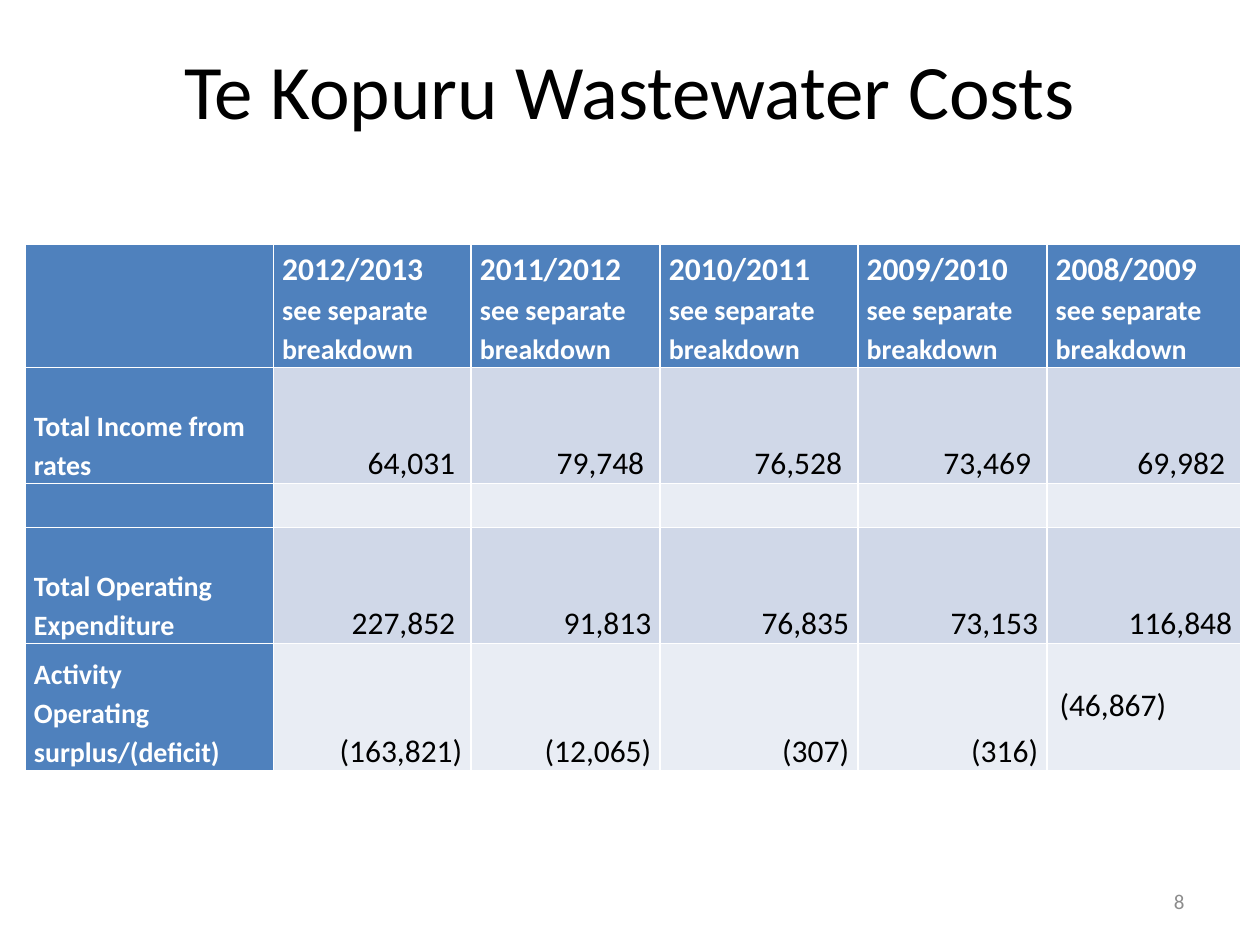
"""Build the Te Kopuru wastewater costs slide."""
from dataclasses import dataclass

from pptx import Presentation
from pptx.dml.color import RGBColor
from pptx.enum.text import MSO_ANCHOR, PP_ALIGN
from pptx.util import Inches, Pt

LEFT, CENTER, RIGHT = PP_ALIGN.LEFT, PP_ALIGN.CENTER, PP_ALIGN.RIGHT
TOP, MIDDLE, BOTTOM = MSO_ANCHOR.TOP, MSO_ANCHOR.MIDDLE, MSO_ANCHOR.BOTTOM
TITLE_ONLY = 5
FONT = "Calibri"
COLORS = {
    "text": "000000", "head": "4F81BD", "head_text": "FFFFFF",
    "band_dark": "D0D8E8", "band_light": "E9EDF4", "number": "8C8C8C",
}
COL_WIDTHS = (1.97, 1.57, 1.5, 1.57, 1.5, 1.54)
YEARS = ("2012/2013", "2011/2012", "2010/2011", "2009/2010", "2008/2009")


@dataclass
class CostRow:
    label: str
    values: tuple[str, ...]
    height: float
    band: str


ROWS = (
    CostRow("Total Income from rates",
            ("64,031 ", "79,748 ", "76,528 ", "73,469 ", "69,982 "), 0.92, "band_dark"),
    CostRow("", ("",) * len(YEARS), 0.35, "band_light"),
    CostRow("Total Operating Expenditure",
            ("227,852 ", "91,813", "76,835", "73,153", "116,848"), 0.92, "band_dark"),
    CostRow("Activity \vOperating surplus/(deficit)",
            ("(163,821)", "(12,065)", "(307)", "(316)", "(46,867)"), 1.01, "band_light"),
)
HEADER_HEIGHT = 0.96


def rgb(name: str) -> RGBColor:
    return RGBColor.from_string(COLORS[name])


def format_paragraph(p, size: float, color: str, align=LEFT, bold: bool = False) -> None:
    p.alignment = align
    font = p.font
    font.name, font.size, font.bold = FONT, Pt(size), bold
    font.color.rgb = rgb(color)


def place(sp, left: float, top: float, width: float, height: float) -> None:
    sp.left, sp.top = Inches(left), Inches(top)
    sp.width, sp.height = Inches(width), Inches(height)


def fill_cell(cell, lines: tuple[tuple[str, float], ...], fill: str,
              color: str, align=LEFT, bold: bool = False) -> None:
    cell.fill.solid()
    cell.fill.fore_color.rgb = rgb(fill)
    cell.vertical_anchor = BOTTOM
    cell.margin_left = cell.margin_right = Inches(0.07)
    cell.margin_top = cell.margin_bottom = 0
    tf = cell.text_frame
    for i, (text, size) in enumerate(lines):
        p = tf.add_paragraph() if i else tf.paragraphs[0]
        p.text = text
        p.line_spacing = 1.15
        format_paragraph(p, size, color, align, bold)


def add_cost_table(s) -> None:
    heights = (HEADER_HEIGHT, *(row.height for row in ROWS))
    table = s.shapes.add_table(
        len(heights), len(COL_WIDTHS), Inches(0.2), Inches(1.94),
        Inches(sum(COL_WIDTHS)), Inches(sum(heights))).table
    table.first_col = True
    for column, width in zip(table.columns, COL_WIDTHS):
        column.width = Inches(width)
    for row, height in zip(table.rows, heights):
        row.height = Inches(height)

    fill_cell(table.cell(0, 0), (("", 16),), "head", "head_text")
    for c, year in enumerate(YEARS, 1):
        lines = ((year, 18), ("see separate breakdown", 16))
        fill_cell(table.cell(0, c), lines, "head", "head_text", bold=True)
    for r, row in enumerate(ROWS, 1):
        fill_cell(table.cell(r, 0), ((row.label, 16),), "head", "head_text", bold=True)
        for c, value in enumerate(row.values, 1):
            fill_cell(table.cell(r, c), ((value, 18),), row.band, "text", RIGHT)

    raised = table.cell(len(ROWS), len(YEARS))
    raised.text_frame.paragraphs[0].alignment = LEFT
    raised.margin_left, raised.margin_bottom = Inches(0.1), Inches(0.36)


def add_title(s) -> None:
    sp = s.shapes.title
    place(sp, 0.5, 0.29, 9, 6.41)
    tf = sp.text_frame
    tf.text = "Te Kopuru Wastewater Costs"
    tf.vertical_anchor = TOP
    format_paragraph(tf.paragraphs[0], 44, "text", CENTER)


def add_slide_number(s) -> None:
    sp = s.shapes.add_textbox(Inches(7.17), Inches(6.95), Inches(2.33), Inches(0.4))
    tf = sp.text_frame
    tf.word_wrap = True
    tf.vertical_anchor = MIDDLE
    tf.text = "8"
    format_paragraph(tf.paragraphs[0], 12, "number", RIGHT)


def main() -> None:
    prs = Presentation()
    prs.slide_width, prs.slide_height = Inches(10), Inches(7.5)
    s = prs.slides.add_slide(prs.slide_layouts[TITLE_ONLY])
    add_title(s)
    add_cost_table(s)
    add_slide_number(s)
    prs.save("out.pptx")


if __name__ == "__main__":
    main()
